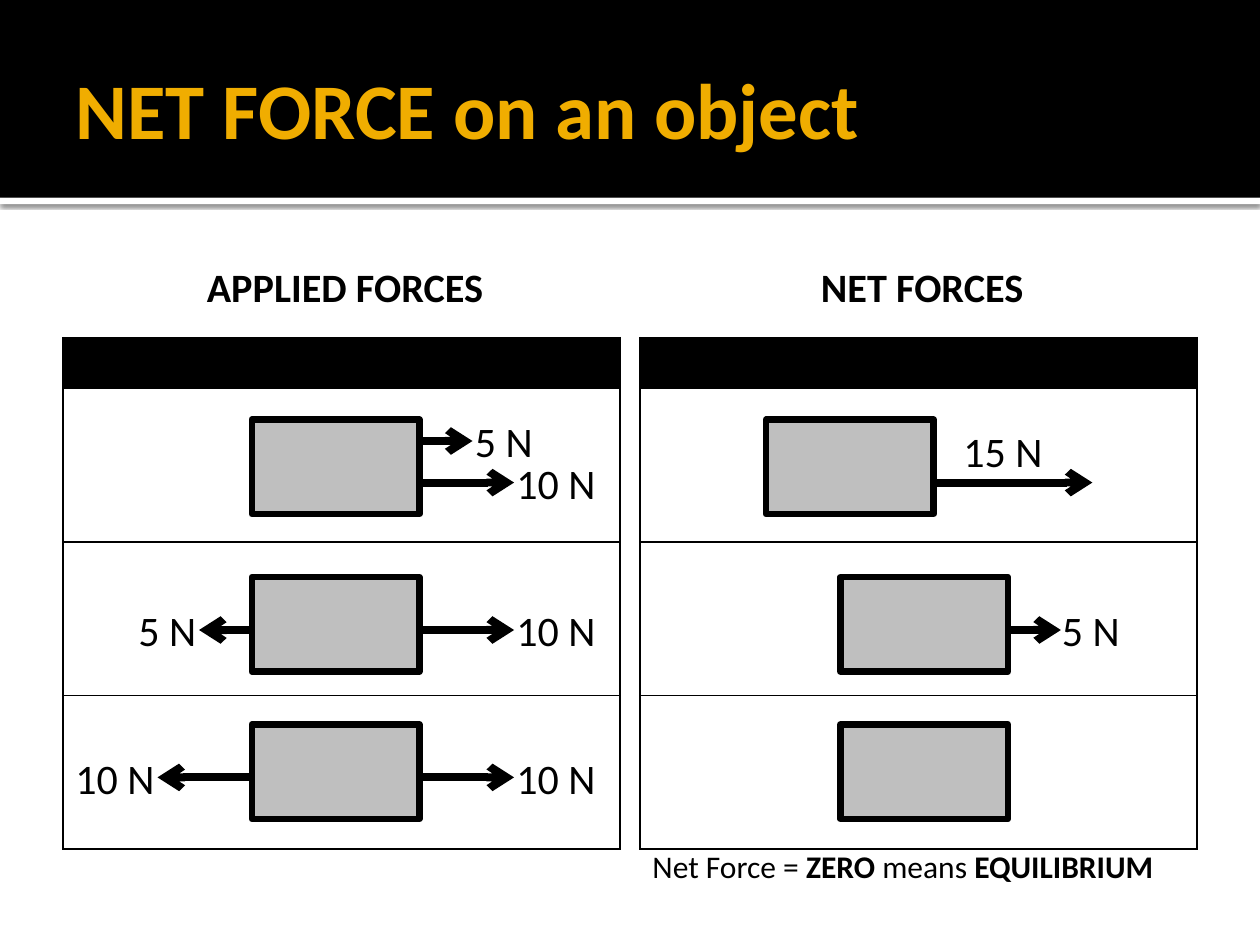
from dataclasses import dataclass
from typing import Optional

from lxml import etree
from pptx import Presentation
from pptx import util as u
from pptx.dml.color import RGBColor
from pptx.enum import shapes, text
from pptx.oxml import parse_xml
from pptx.oxml.ns import nsdecls, qn

INK = {"black": "000000", "white": "FFFFFF", "gold": "F0AD00", "gray": "BFBFBF"}
FONT = "Calibri"
BOX_W, BOX_H = 1.33, 0.75


@dataclass
class Panel:
    head: str
    left: float
    rows: list[float]


@dataclass
class Force:
    start: float
    y: float
    run: float
    label: str
    label_x: float
    wide: float
    label_y: Optional[float] = None
    align: text.PP_ALIGN = text.PP_ALIGN.LEFT


PANELS = [
    Panel("APPLIED FORCES", 0.5, [0.39, 1.22, 1.22, 1.22]),
    Panel("NET FORCES", 5.08, [0.4, 1.22, 1.22, 1.22]),
]
BOXES = [(2, 3.33), (2, 4.58), (2, 5.75), (6.08, 3.33), (6.67, 4.58), (6.67, 5.75)]
FORCES = [
    Force(3.33, 3.5, 0.42, "5 N", 3.67, 0.75),
    Force(3.33, 3.83, 0.75, "10 N", 4, 0.92),
    Force(2, 5, -0.42, "5 N", 1, 0.75),
    Force(3.33, 5, 0.75, "10 N", 4, 0.92),
    Force(2, 6.17, -0.75, "10 N", 0.5, 0.92),
    Force(3.33, 6.17, 0.75, "10 N", 4, 0.92),
    Force(7.42, 3.83, 1.25, "15 N", 7.42, 1.08, 3.33, text.PP_ALIGN.CENTER),
    Force(8, 5, 0.42, "5 N", 8.33, 0.75),
]


def color(name: str) -> RGBColor:
    return RGBColor.from_string(INK[name])


def place(x: float, y: float, w: float, h: float) -> list[u.Length]:
    return [u.Inches(v) for v in (x, y, w, h)]


def style(par, size: float, tint: str = "black", bold: bool = False,
          align: text.PP_ALIGN = text.PP_ALIGN.LEFT) -> None:
    par.alignment = align
    par.font.name, par.font.size, par.font.bold = FONT, u.Pt(size), bold
    par.font.color.rgb = color(tint)


def inset(frame, left: float, top: float, right: float, base: float) -> None:
    frame.margin_left, frame.margin_top = u.Inches(left), u.Inches(top)
    frame.margin_right, frame.margin_bottom = u.Inches(right), u.Inches(base)
    frame.vertical_anchor = text.MSO_ANCHOR.MIDDLE


def add_text(slide, words: str, x: float, y: float, w: float, h: float, size: float,
             bold: bool = False, align: text.PP_ALIGN = text.PP_ALIGN.LEFT):
    frame = slide.shapes.add_textbox(*place(x, y, w, h)).text_frame
    frame.word_wrap = True
    par = frame.paragraphs[0]
    if words:
        par.add_run().text = words
    style(par, size, bold=bold, align=align)
    return frame


def add_rect(slide, x: float, y: float, w: float, h: float, fill: str, line: float = 0):
    rect = slide.shapes.add_shape(shapes.MSO_SHAPE.RECTANGLE, *place(x, y, w, h))
    rect.shadow.inherit = False
    rect.fill.solid()
    rect.fill.fore_color.rgb = color(fill)
    if line:
        rect.line.color.rgb = color("black")
        rect.line.width = u.Pt(line)
    else:
        rect.line.fill.background()
    return rect


def add_band(slide) -> None:
    strip = add_rect(slide, 0, 1.57, 10, 0.05, "white")
    glow = strip._element.spPr.find(qn("a:effectLst"))
    glow.append(parse_xml(
        f'<a:outerShdw {nsdecls("a")} blurRad="{u.Pt(2.5)}" dist="{u.Pt(0.8)}" '
        f'dir="5400000" algn="tl" rotWithShape="0"><a:srgbClr val="{INK["black"]}">'
        '<a:alpha val="60000"/></a:srgbClr></a:outerShdw>'))
    add_rect(slide, 0, 0, 10, 1.57, "black")


def add_title(slide) -> None:
    title = slide.shapes.title
    title.left, title.top, title.width, title.height = place(0.5, 0.17, 9, 1.37)
    title.text_frame.text = "NET FORCE on an object"
    inset(title.text_frame, 0.1, 0.05, 0.05, 0.05)
    style(title.text_frame.paragraphs[0], 45, "gold", True)
    slide.shapes._spTree.append(title._element)


def edge(cell) -> None:
    props = cell._tc.get_or_add_tcPr()
    for spot, side in enumerate(("lnL", "lnR", "lnT", "lnB")):
        props.insert(spot, parse_xml(
            f'<a:{side} {nsdecls("a")} w="{u.Pt(1)}"><a:solidFill>'
            f'<a:srgbClr val="{INK["black"]}"/></a:solidFill></a:{side}>'))


def add_panel(slide, panel: Panel) -> None:
    head = add_text(slide, panel.head, panel.left, 1.86, 4.42, 0.78, 23, True,
                    text.PP_ALIGN.CENTER)
    inset(head, 0.16, 0.1, 0.1, 0.05)
    grid = slide.shapes.add_table(
        len(panel.rows), 1, *place(panel.left, 2.68, 4.42, sum(panel.rows))).table
    for index, high in enumerate(panel.rows):
        grid.rows[index].height = u.Inches(high)
        cell = grid.cell(index, 0)
        cell.fill.solid()
        cell.fill.fore_color.rgb = color("white" if index else "black")
        edge(cell)


def add_force(slide, force: Force) -> None:
    x, y = u.Inches(force.start), u.Inches(force.y)
    arrow = slide.shapes.add_connector(
        shapes.MSO_CONNECTOR.STRAIGHT, x, y, x + u.Inches(force.run), y)
    arrow.line.color.rgb = color("black")
    arrow.line.width = u.Pt(4.5)
    etree.SubElement(arrow.line._get_or_add_ln(), qn("a:tailEnd"), type="arrow")
    etree.SubElement(arrow._element.spPr, qn("a:effectLst"))
    top = force.y - 0.25 if force.label_y is None else force.label_y
    add_text(slide, force.label, force.label_x, top, force.wide, 0.5, 24,
             align=force.align)


def add_note(slide) -> None:
    par = add_text(slide, "", 5.08, 6.67, 4.42, 0.4, 18).paragraphs[0]
    for words, bold in (("Net Force = ", False), ("ZERO", True),
                        (" means ", False), ("EQUILIBRIUM", True)):
        run = par.add_run()
        run.text, run.font.bold = words, bold


def main() -> None:
    deck = Presentation()
    deck.slide_width, deck.slide_height = u.Inches(10), u.Inches(7.5)
    slide = deck.slides.add_slide(deck.slide_layouts[5])
    add_band(slide)
    add_title(slide)
    for panel in PANELS:
        add_panel(slide, panel)
    for x, y in BOXES:
        add_rect(slide, x, y, BOX_W, BOX_H, "gray", 3.78)
    for force in FORCES:
        add_force(slide, force)
    add_note(slide)
    deck.save("out.pptx")


if __name__ == "__main__":
    main()
